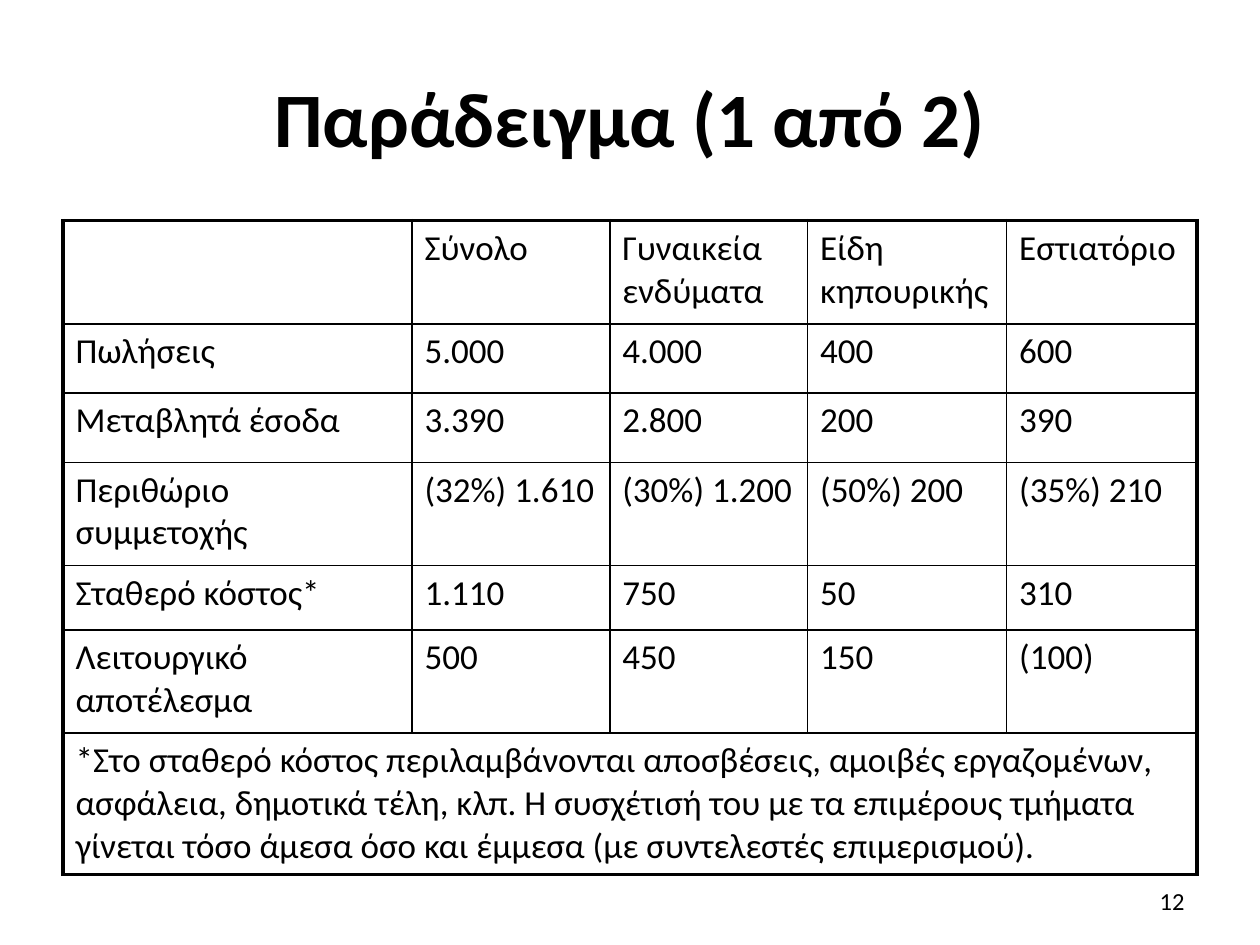
from lxml.etree import SubElement
from pptx import Presentation
from pptx.dml.color import RGBColor
from pptx.enum.text import MSO_ANCHOR, PP_ALIGN
from pptx.oxml.ns import qn
from pptx.util import Inches, Pt

COLORS = {"ink": "000000", "paper": "FFFFFF"}
FONT = "Calibri"
THIN, THICK = 1, 2.25
COLS = [2.77, 1.57, 1.57, 1.58, 1.51]
ROWS = [0.82, 0.55, 0.55, 0.82, 0.51, 0.82, 1.12]
DATA = [
    ["", "Σύνολο", "Γυναικεία ενδύματα", "Είδη κηπουρικής", "Εστιατόριο"],
    ["Πωλήσεις", "5.000", "4.000", "400", "600"],
    ["Μεταβλητά έσοδα", "3.390", "2.800", "200", "390"],
    ["Περιθώριο συμμετοχής", "(32%) 1.610", "(30%) 1.200", "(50%) 200", "(35%) 210"],
    ["Σταθερό κόστος*", "1.110", "750", "50", "310"],
    ["Λειτουργικό αποτέλεσμα", "500", "450", "150", "(100)"],
]
NOTE = (
    "*Στο σταθερό κόστος περιλαμβάνονται αποσβέσεις, αμοιβές εργαζομένων, "
    "ασφάλεια, δημοτικά τέλη, κλπ. Η συσχέτισή του με τα επιμέρους τμήματα "
    "γίνεται τόσο άμεσα όσο και έμμεσα (με συντελεστές επιμερισμού)."
)


def write(frame, text, size=20, bold=False, align=PP_ALIGN.LEFT, anchor=None):
    frame.word_wrap = True
    if anchor is not None:
        frame.vertical_anchor = anchor
    para = frame.paragraphs[0]
    para.alignment = align
    para.font.size = Pt(size)
    run = para.add_run()
    run.text = text
    run.font.name = FONT
    run.font.size = Pt(size)
    run.font.bold = bold
    run.font.color.rgb = RGBColor.from_string(COLORS["ink"])


def add_edges(cell, widths):
    props = cell._tc.get_or_add_tcPr()
    for side, width in widths.items():
        line = SubElement(props, qn(f"a:ln{side}"), w=str(Pt(width)))
        fill = SubElement(line, qn("a:solidFill"))
        SubElement(fill, qn("a:srgbClr"), val=COLORS["ink"])


def add_title(slide, box, text):
    title = slide.shapes.title
    title.left, title.top, title.width, title.height = map(Inches, box)
    write(title.text_frame, text, size=44, bold=True,
          align=PP_ALIGN.CENTER, anchor=MSO_ANCHOR.MIDDLE)


def add_costs(slide, box):
    last_row, last_col = len(ROWS) - 1, len(COLS) - 1
    table = slide.shapes.add_table(len(ROWS), len(COLS), *map(Inches, box)).table
    table.first_row = table.horz_banding = False
    for col, width in zip(table.columns, COLS):
        col.width = Inches(width)
    for row, height in zip(table.rows, ROWS):
        row.height = Inches(height)
    for r in range(len(ROWS)):
        for c in range(len(COLS)):
            cell = table.cell(r, c)
            add_edges(cell, {
                "L": THICK if c == 0 else THIN,
                "R": THICK if c == last_col or r == last_row else THIN,
                "T": THICK if r == 0 else THIN,
                "B": THICK if r == last_row else THIN,
            })
            cell.fill.background()
            if r < last_row:
                write(cell.text_frame, DATA[r][c])
    foot = table.cell(last_row, 0)
    foot.merge(table.cell(last_row, last_col))
    write(foot.text_frame, NOTE)


def add_number(slide, box, text):
    label = slide.shapes.add_textbox(*map(Inches, box))
    write(label.text_frame, text, size=14,
          align=PP_ALIGN.RIGHT, anchor=MSO_ANCHOR.MIDDLE)


def main():
    deck = Presentation()
    deck.slide_width, deck.slide_height = Inches(10), Inches(7.5)
    slide = deck.slides.add_slide(deck.slide_layouts[5])
    slide.background.fill.solid()
    slide.background.fill.fore_color.rgb = RGBColor.from_string(COLORS["paper"])
    add_title(slide, (0.5, 0.3, 9, 1.25), "Παράδειγμα (1 από 2)")
    add_costs(slide, (0.5, 1.75, 9, 5.19))
    add_number(slide, (7.17, 6.95, 2.33, 0.4), "12")
    deck.save("out.pptx")


if __name__ == "__main__":
    main()
